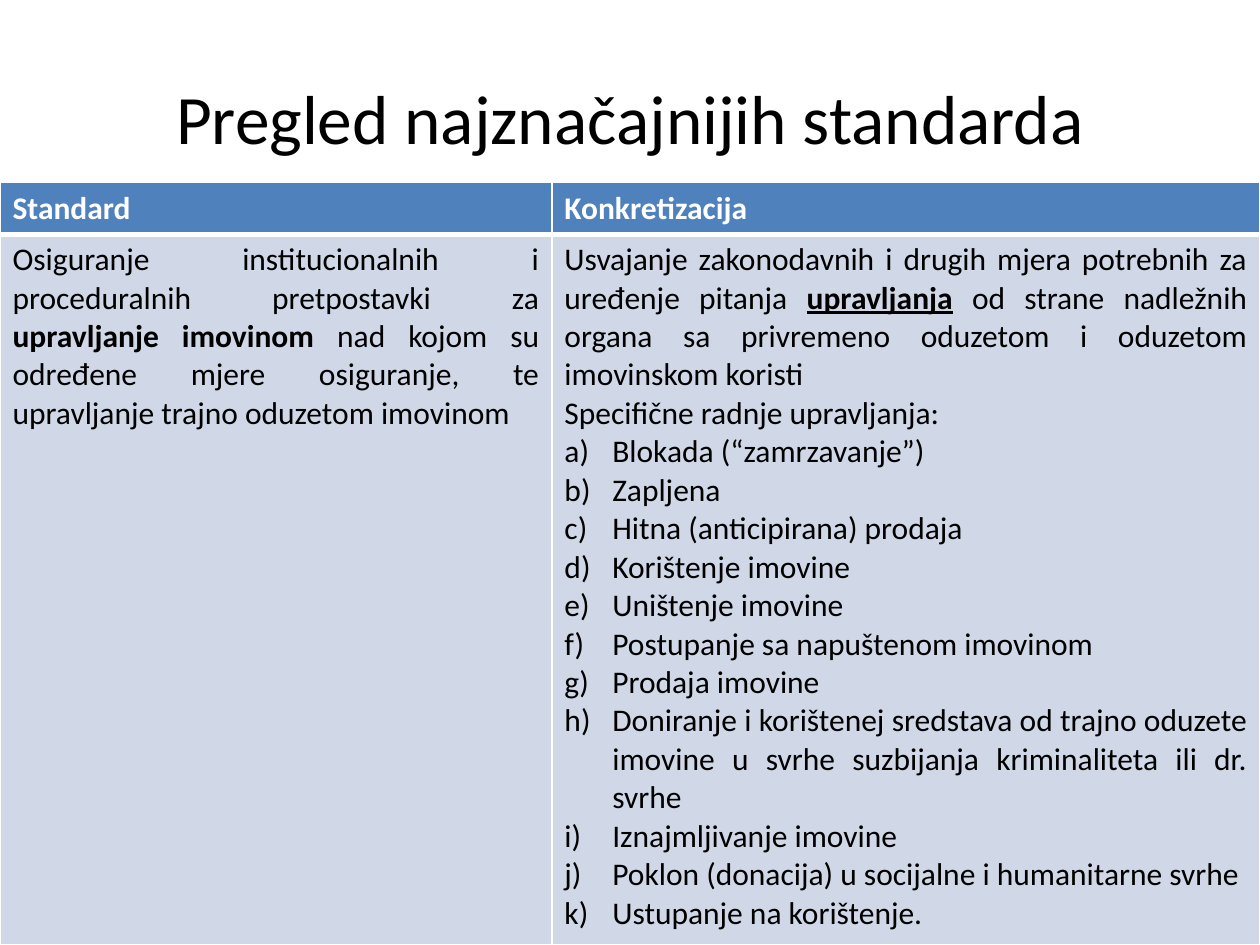
from lxml.etree import SubElement
from pptx import Presentation
from pptx.dml.color import RGBColor
from pptx.enum.text import MSO_ANCHOR as Anchor, MSO_AUTO_SIZE as AutoSize, PP_ALIGN as Align
from pptx.oxml.ns import qn
from pptx.util import Inches, Pt

BLACK = RGBColor(0x00, 0x00, 0x00)
WHITE = RGBColor(0xFF, 0xFF, 0xFF)
HEADER_BLUE = RGBColor(0x4F, 0x81, 0xBD)
BODY_BLUE = RGBColor(0xD0, 0xD8, 0xE8)

FONT = "Calibri"
TITLE_ONLY = 5
TABLE_TOP = 1.45 / 7.5
HEADER_SHARE = 0.41 / 7.5
COLUMN_SHARES = (0.438, 0.562)
HANGING = Inches(0.38)

HEADINGS = ("Standard", "Konkretizacija")
STANDARD = [
    ("Osiguranje institucionalnih i proceduralnih pretpostavki za ", {}),
    ("upravljanje imovinom", {"bold": True}),
    (" nad kojom su određene mjere osiguranje, te upravljanje trajno oduzetom imovinom", {}),
]
MEASURES = [
    ("Usvajanje zakonodavnih i drugih mjera potrebnih za uređenje pitanja ", {}),
    ("upravljanja", {"bold": True, "underline": True}),
    (" od strane nadležnih organa sa privremeno oduzetom i oduzetom imovinskom koristi", {}),
]
ACTIONS_INTRO = "Specifične radnje upravljanja:"
ACTIONS = (
    "Blokada (“zamrzavanje”)",
    "Zapljena",
    "Hitna (anticipirana) prodaja",
    "Korištenje imovine",
    "Uništenje imovine",
    "Postupanje sa napuštenom imovinom",
    "Prodaja imovine",
    "Doniranje i korištenej sredstava od trajno oduzete imovine u svrhe "
    "suzbijanja kriminaliteta ili dr. svrhe",
    "Iznajmljivanje imovine",
    "Poklon (donacija) u socijalne i humanitarne svrhe",
    "Ustupanje na korištenje.",
)


def letter_paragraph(paragraph):
    """Number the paragraph a), b), c) with a hanging indent."""
    properties = paragraph._p.get_or_add_pPr()
    properties.set("marL", str(HANGING))
    properties.set("indent", str(-HANGING))
    SubElement(properties, qn("a:buFont"), typeface="+mj-lt")
    SubElement(properties, qn("a:buAutoNum"), type="alphaLcParenR")


def write(paragraph, content, size=18, color=BLACK, align=Align.JUSTIFY, bold=False, lettered=False):
    """Fill a paragraph with a string or a list of (text, format) runs."""
    if lettered:
        letter_paragraph(paragraph)
    paragraph.alignment = align
    runs = [(content, {})] if isinstance(content, str) else content
    for text, run_format in runs:
        run = paragraph.add_run()
        run.text = text
        font = run.font
        font.name, font.size = FONT, Pt(size)
        font.color.rgb = color
        font.bold = run_format.get("bold", bold)
        font.underline = run_format.get("underline", False)


def set_borders(cell, top=1, bottom=1):
    properties = cell._tc.get_or_add_tcPr()
    for side, width in (("L", 1), ("R", 1), ("T", top), ("B", bottom)):
        line = SubElement(properties, qn(f"a:ln{side}"), w=str(Pt(width)))
        fill = SubElement(line, qn("a:solidFill"))
        SubElement(fill, qn("a:srgbClr"), val=str(WHITE))


class StandardsSlide:
    """Holds the slide and places elements by shares of its size."""

    def __init__(self, presentation):
        self.width = presentation.slide_width
        self.height = presentation.slide_height
        self.slide = presentation.slides.add_slide(presentation.slide_layouts[TITLE_ONLY])

    def box(self, left, top, width, height):
        return (int(left * self.width), int(top * self.height),
                int(width * self.width), int(height * self.height))

    def title(self, text, left, top, width, height):
        heading = self.slide.shapes.title
        heading.left, heading.top, heading.width, heading.height = self.box(left, top, width, height)
        frame = heading.text_frame
        frame.auto_size = AutoSize.NONE
        frame.vertical_anchor = Anchor.MIDDLE
        write(frame.paragraphs[0], text, size=39.6, align=Align.CENTER)

    def table(self, top):
        area = self.box(0, top, 1, 1 - top)
        table = self.slide.shapes.add_table(2, len(COLUMN_SHARES), *area).table
        for column, share in zip(table.columns, COLUMN_SHARES):
            column.width = int(share * self.width)
        header, body = table.rows
        header.height = int(HEADER_SHARE * self.height)
        body.height = area[3] - header.height
        return table

    def cell(self, cell, paragraphs, fill, top=1, bottom=1):
        """Style a cell and write its (content, format) paragraphs."""
        set_borders(cell, top, bottom)
        cell.fill.solid()
        cell.fill.fore_color.rgb = fill
        frame = cell.text_frame
        for index, (content, text_format) in enumerate(paragraphs):
            paragraph = frame.add_paragraph() if index else frame.paragraphs[0]
            write(paragraph, content, **text_format)


def main():
    presentation = Presentation()
    presentation.slide_width, presentation.slide_height = Inches(10), Inches(7.5)
    page = StandardsSlide(presentation)
    page.title("Pregled najznačajnijih standarda", 0.05, 0.04, 0.9, 1 / 6)

    table = page.table(TABLE_TOP)
    heading_format = {"color": WHITE, "bold": True, "align": Align.LEFT}
    for column, heading in enumerate(HEADINGS):
        page.cell(table.cell(0, column), [(heading, heading_format)], HEADER_BLUE, bottom=3)

    measures = [(MEASURES, {}), (ACTIONS_INTRO, {})]
    measures += [(action, {"lettered": True}) for action in ACTIONS]
    for column, paragraphs in enumerate(([(STANDARD, {})], measures)):
        page.cell(table.cell(1, column), paragraphs, BODY_BLUE, top=3)

    presentation.save("out.pptx")


if __name__ == "__main__":
    main()
